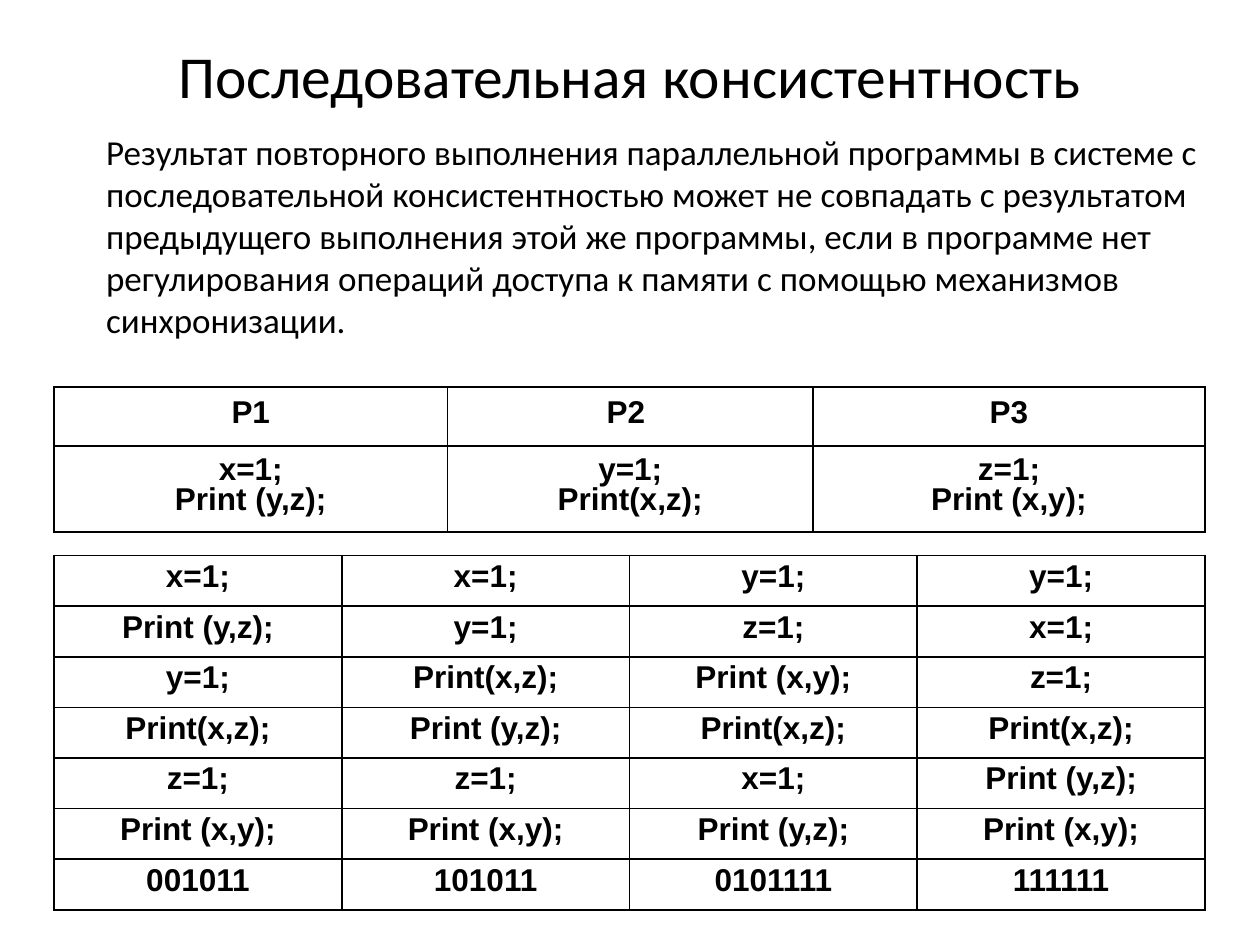
from lxml.etree import fromstring
from pptx import Presentation
from pptx.dml.color import RGBColor
from pptx.enum.text import MSO_ANCHOR, PP_ALIGN
from pptx.oxml.ns import nsdecls
from pptx.util import Cm, Pt

COLORS = {"text": "000000", "border": "000000"}

BODY = (
    "Результат повторного выполнения параллельной программы в системе с "
    "последовательной консистентностью может не совпадать с результатом "
    "предыдущего выполнения этой же программы, если в программе нет "
    "регулирования операций доступа к памяти с помощью механизмов синхронизации."
)
PROCESSES = [
    ["P1", "P2 ", "P3"],
    ["x=1;\nPrint (y,z);", "y=1;\nPrint(x,z);", "z=1;\nPrint (x,y);"],
]
ORDERS = [
    ["x=1;", "x=1;", "y=1;", "y=1;"],
    ["Print (y,z);", "y=1;", "z=1;", "x=1;"],
    ["y=1;", "Print(x,z);", "Print (x,y);", "z=1;"],
    ["Print(x,z);", "Print (y,z);", "Print(x,z);", "Print(x,z);"],
    ["z=1;", "z=1;", "x=1;", "Print (y,z);"],
    ["Print (x,y);", "Print (x,y);", "Print (y,z);", "Print (x,y);"],
    ["001011", "101011", "0101111", "111111"],
]


def write_text(tf, text, size, font="Calibri", bold=False,
               align=PP_ALIGN.LEFT, spacing=None, before=0):
    """Fill a text frame, one paragraph per line of text."""
    for i, line in enumerate(text.split("\n")):
        p = tf.add_paragraph() if i else tf.paragraphs[0]
        p.alignment = align
        p.line_spacing = spacing
        p.space_before = Pt(before)
        r = p.add_run()
        r.text = line
        r.font.size = Pt(size)
        r.font.name = font
        r.font.bold = bold
        r.font.color.rgb = RGBColor.from_string(COLORS["text"])


def add_text(s, text, left, top, width, height, anchor=MSO_ANCHOR.TOP,
             margin_left=0.25, **fmt):
    """Add a wrapping text box, measured in centimetres."""
    sp = s.shapes.add_textbox(Cm(left), Cm(top), Cm(width), Cm(height))
    tf = sp.text_frame
    tf.word_wrap = True
    tf.vertical_anchor = anchor
    tf.margin_left = Cm(margin_left)
    write_text(tf, text, **fmt)


def set_borders(cell):
    """Draw a thin line on all four sides of a cell."""
    tcPr = cell._tc.get_or_add_tcPr()
    for i, side in enumerate("LRTB"):
        tcPr.insert(i, fromstring(
            f'<a:ln{side} {nsdecls("a")} w="{Pt(1)}"><a:solidFill>'
            f'<a:srgbClr val="{COLORS["border"]}"/></a:solidFill></a:ln{side}>'))


def add_grid(s, rows, top, widths, heights, margin):
    """Add a bordered table of bold centred code, measured in centimetres."""
    table = s.shapes.add_table(len(rows), len(widths), Cm(1.09), Cm(top),
                               Cm(sum(widths)), Cm(sum(heights))).table
    table.first_row = table.horz_banding = False
    for column, width in zip(table.columns, widths):
        column.width = Cm(width)
    for row, height, texts in zip(table.rows, heights, rows):
        row.height = Cm(height)
        for cell, text in zip(row.cells, texts):
            cell.fill.background()
            cell.vertical_anchor = MSO_ANCHOR.MIDDLE
            cell.margin_top = cell.margin_bottom = Cm(margin)
            write_text(cell.text_frame, text, 18, font="Arial", bold=True,
                       align=PP_ALIGN.CENTER, spacing=0.62, before=4.5)
            set_borders(cell)


def main():
    """Build the slide and save it."""
    prs = Presentation()
    prs.slide_width, prs.slide_height = Cm(25.4), Cm(19.05)
    s = prs.slides.add_slide(prs.slide_layouts[6])
    add_text(s, "Последовательная консистентность", 0.89, -0.08, 23.6, 3.18,
             anchor=MSO_ANCHOR.MIDDLE, size=34, align=PP_ALIGN.CENTER)
    add_text(s, BODY, 0.97, 2.51, 23.95, 14.6, margin_left=1.17, size=20, before=5)
    add_grid(s, PROCESSES, 7.8, [7.93, 7.37, 7.9], [1.19, 1.73], 0)
    add_grid(s, ORDERS, 11.2, [5.8] * 4, [1.02] * len(ORDERS), 0.15)
    prs.save("out.pptx")


if __name__ == "__main__":
    main()
